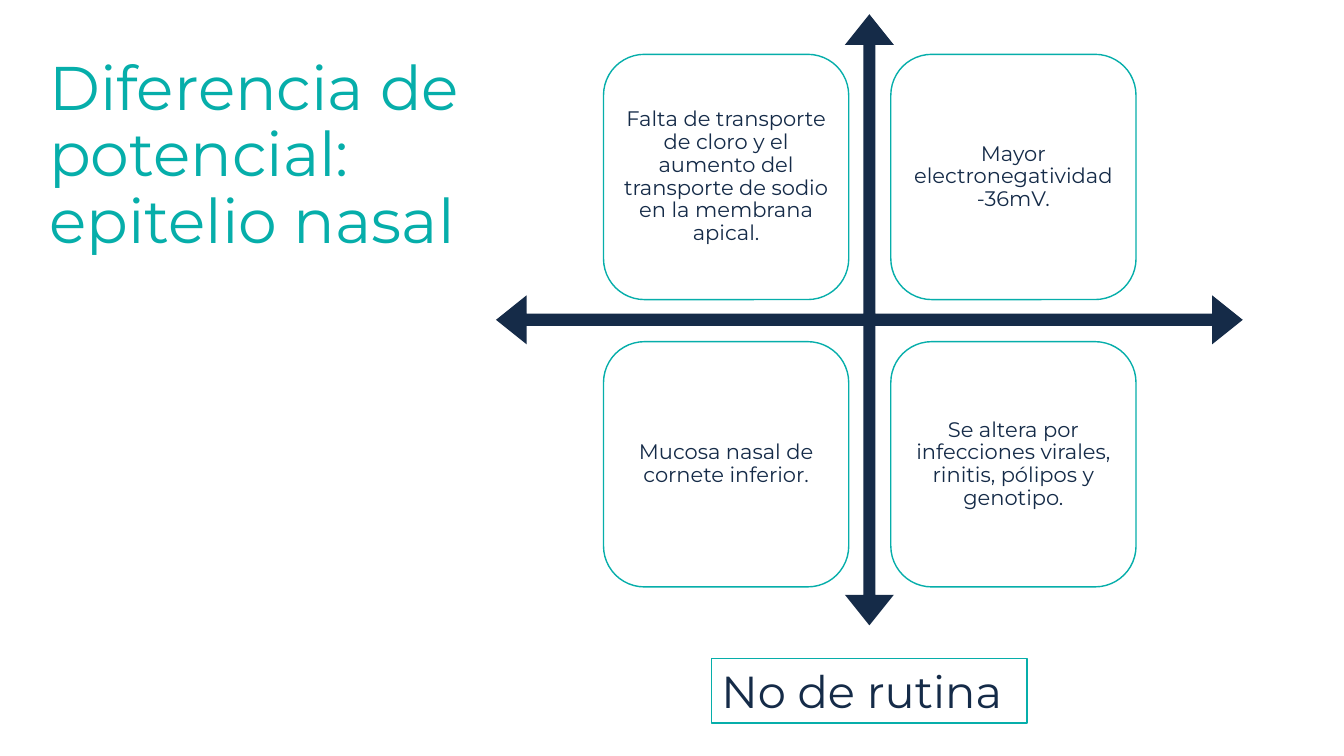
import pptx
import pptx.dml.color
import pptx.enum.shapes
import pptx.enum.text
import pptx.util
from pptx.util import Cm

TEAL = pptx.dml.color.RGBColor(0x06, 0xAE, 0xAA)
NAVY = pptx.dml.color.RGBColor(0x15, 0x2B, 0x48)
WHITE = pptx.dml.color.RGBColor(0xFF, 0xFF, 0xFF)

FONT = "Montserrat"
SHAPES = pptx.enum.shapes.MSO_SHAPE
ALIGN = pptx.enum.text.PP_ALIGN
MIDDLE = pptx.enum.text.MSO_ANCHOR.MIDDLE

CARD_LEFT, CARD_TOP = 15.21, 1.37
CARD_SIDE, CARD_STEP = 6.18, 7.24
CARD_INSET = Cm(0.15)
FINDINGS = [
    ["Falta de transporte de cloro y el aumento del transporte de sodio "
     "en la membrana apical.",
     "Mayor electronegatividad -36mV."],
    ["Mucosa nasal de cornete inferior.",
     "Se altera por infecciones virales, rinitis, pólipos y genotipo."],
]


def write(frame, text, size, color, align=ALIGN.LEFT, line_spacing=1.0):
    frame.word_wrap = True
    frame.vertical_anchor = MIDDLE
    paragraph = frame.paragraphs[0]
    paragraph.alignment = align
    paragraph.line_spacing = line_spacing
    run = paragraph.add_run()
    run.text = text
    run.font.name = FONT
    run.font.size = pptx.util.Pt(size)
    run.font.color.rgb = color


def add_title(slide, text):
    title = slide.shapes.add_textbox(Cm(0.99), Cm(0.99), Cm(12.98), Cm(5.92))
    write(title.text_frame, text, 44, TEAL, line_spacing=0.9)


def add_axes(slide):
    """Add the four-headed arrow that separates the quadrants."""
    axes = slide.shapes.add_shape(
        SHAPES.QUAD_ARROW, Cm(12.5), Cm(0.36), Cm(18.82), Cm(15.4))
    axes.shadow.inherit = False
    for index, ratio in enumerate((0.02, 0.04, 0.05)):
        axes.adjustments[index] = ratio
    axes.fill.solid()
    axes.fill.fore_color.rgb = NAVY
    axes.line.fill.background()


def add_outlined(slide, preset, left, top, width, height):
    """Add a white shape with a thin teal outline; lengths in centimetres."""
    panel = slide.shapes.add_shape(
        preset, Cm(left), Cm(top), Cm(width), Cm(height))
    panel.shadow.inherit = False
    panel.fill.solid()
    panel.fill.fore_color.rgb = WHITE
    panel.line.color.rgb = TEAL
    panel.line.width = pptx.util.Pt(1)
    return panel


def add_card(slide, row, column, text):
    card = add_outlined(
        slide, SHAPES.ROUNDED_RECTANGLE,
        CARD_LEFT + column * CARD_STEP, CARD_TOP + row * CARD_STEP,
        CARD_SIDE, CARD_SIDE)
    frame = card.text_frame
    frame.margin_left = frame.margin_right = CARD_INSET
    frame.margin_top = frame.margin_bottom = CARD_INSET
    write(frame, text, 15, NAVY, ALIGN.CENTER, 0.9)


def add_conclusion(slide, text):
    conclusion = add_outlined(
        slide, SHAPES.RECTANGLE, 17.93, 16.59, 7.95, 1.63)
    write(conclusion.text_frame, text, 32, NAVY)


def main():
    deck = pptx.Presentation()
    deck.slide_width, deck.slide_height = Cm(33.87), Cm(19.05)
    slide = deck.slides.add_slide(deck.slide_layouts[6])

    add_title(slide, "Diferencia de potencial: epitelio nasal")
    add_axes(slide)
    for row, findings in enumerate(FINDINGS):
        for column, finding in enumerate(findings):
            add_card(slide, row, column, finding)
    add_conclusion(slide, "No de rutina")

    deck.save("out.pptx")


if __name__ == "__main__":
    main()
